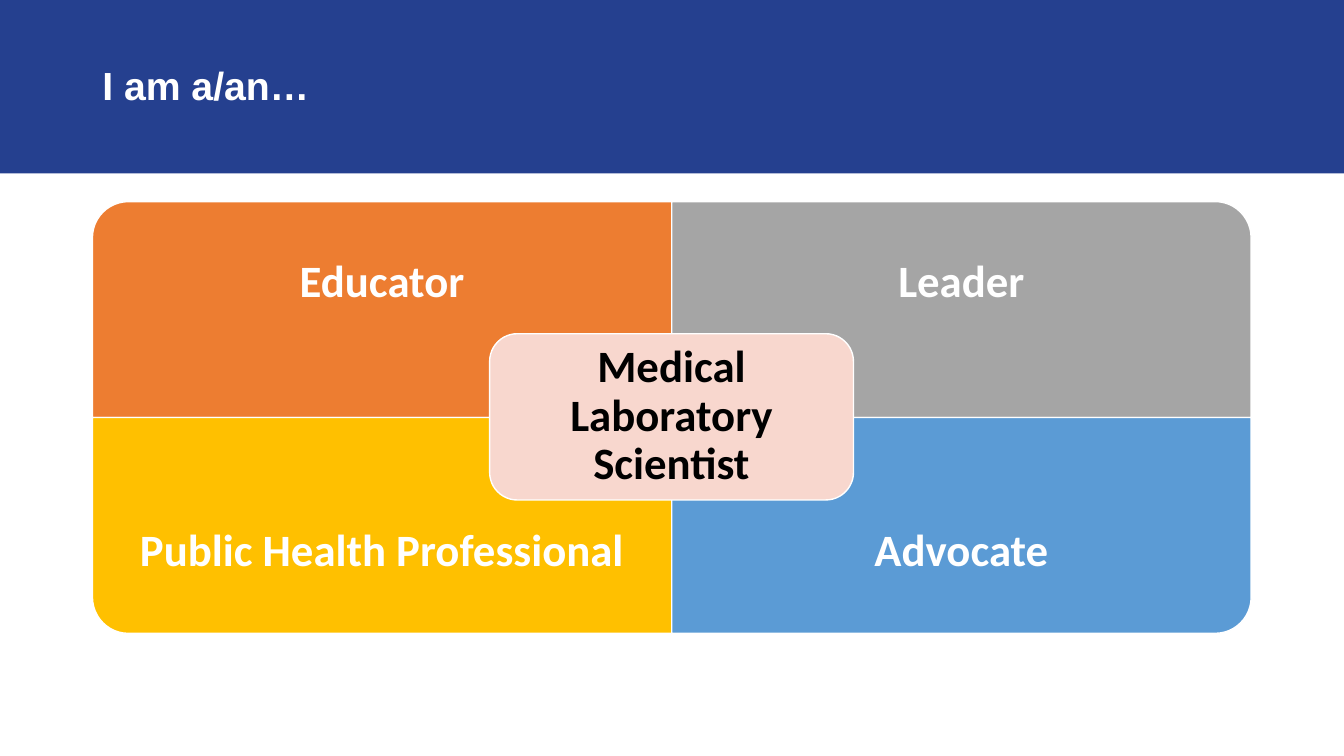
from dataclasses import dataclass

from pptx import Presentation
from pptx.dml.color import RGBColor
from pptx.enum.shapes import MSO_SHAPE
from pptx.enum.text import MSO_ANCHOR, PP_ALIGN
from pptx.util import Cm, Pt


@dataclass(frozen=True)
class Theme:
    navy: str = "25408F"
    white: str = "FFFFFF"
    black: str = "000000"
    orange: str = "ED7D31"
    gray: str = "A5A5A5"
    gold: str = "FFC000"
    blue: str = "5B9BD5"
    pink: str = "F8D7CE"
    title: int = 28
    label: int = 32


def write(frame, text, font, size, color, align=PP_ALIGN.LEFT, inset=None):
    frame.word_wrap = True
    frame.vertical_anchor = MSO_ANCHOR.MIDDLE
    if inset is not None:
        frame.margin_left = frame.margin_right = Cm(inset)
        frame.margin_top = frame.margin_bottom = Cm(inset)
    line = frame.paragraphs[0]
    line.alignment = align
    line.line_spacing = 0.9
    run = line.add_run()
    run.text = text
    run.font.name = font
    run.font.size = Pt(size)
    run.font.bold = True
    run.font.color.rgb = RGBColor.from_string(color)


class Painter:
    def __init__(self, slide, theme):
        self.slide = slide
        self.theme = theme

    def shape(self, kind, left, top, width, height, fill, edge=None, turn=0):
        item = self.slide.shapes.add_shape(kind, Cm(left), Cm(top), Cm(width), Cm(height))
        item.shadow.inherit = False
        item.rotation = turn
        item.fill.solid()
        item.fill.fore_color.rgb = RGBColor.from_string(fill)
        if edge:
            item.line.color.rgb = RGBColor.from_string(edge)
            item.line.width = Pt(1)
        else:
            item.line.fill.background()
        return item

    def text(self, left, top, width, height, text, **style):
        box = self.slide.shapes.add_textbox(Cm(left), Cm(top), Cm(width), Cm(height))
        write(box.text_frame, text, **style)

    def label(self, left, top, width, height, text, color, inset):
        self.text(left, top, width, height, text, font="Calibri", size=self.theme.label,
                  color=color, align=PP_ALIGN.CENTER, inset=inset)

    def panel(self, col, row, text, fill, turn):
        width, height, depth = 14.6, 5.44, 4.08
        left = 2.33 + col * width
        top = 5.08 + row * height
        if turn % 180:
            shift = (width - height) / 2
            area = left + shift, top - shift, height, width
        else:
            area = left, top, width, height
        self.shape(MSO_SHAPE.ROUND_1_RECTANGLE, *area, fill, self.theme.white, turn)
        self.label(left, top + row * (height - depth), width, depth, text,
                   self.theme.white, 0.63)

    def center(self, text):
        left, top, width, height, gap = 12.34, 8.41, 9.17, 4.19, 0.2
        self.shape(MSO_SHAPE.ROUNDED_RECTANGLE, left, top, width, height,
                   self.theme.pink, self.theme.white)
        self.label(left + gap, top + gap, width - 2 * gap, height - 2 * gap, text,
                   self.theme.black, 0.32)

    def header(self, text):
        self.shape(MSO_SHAPE.RECTANGLE, 0, 0, 33.87, 4.37, self.theme.navy)
        self.text(2.33, 0.36, 29.21, 3.68, text, font="Arial",
                  size=self.theme.title, color=self.theme.white)


def main():
    deck = Presentation()
    deck.slide_width = Cm(33.87)
    deck.slide_height = Cm(19.05)
    theme = Theme()
    paint = Painter(deck.slides.add_slide(deck.slide_layouts[6]), theme)
    paint.header("I am a/an…")
    roles = [
        (0, 0, "Educator", theme.orange, 270),
        (1, 0, "Leader", theme.gray, 0),
        (0, 1, "Public Health Professional", theme.gold, 180),
        (1, 1, "Advocate", theme.blue, 90),
    ]
    for role in roles:
        paint.panel(*role)
    paint.center("Medical Laboratory Scientist")
    deck.save("out.pptx")


if __name__ == "__main__":
    main()
